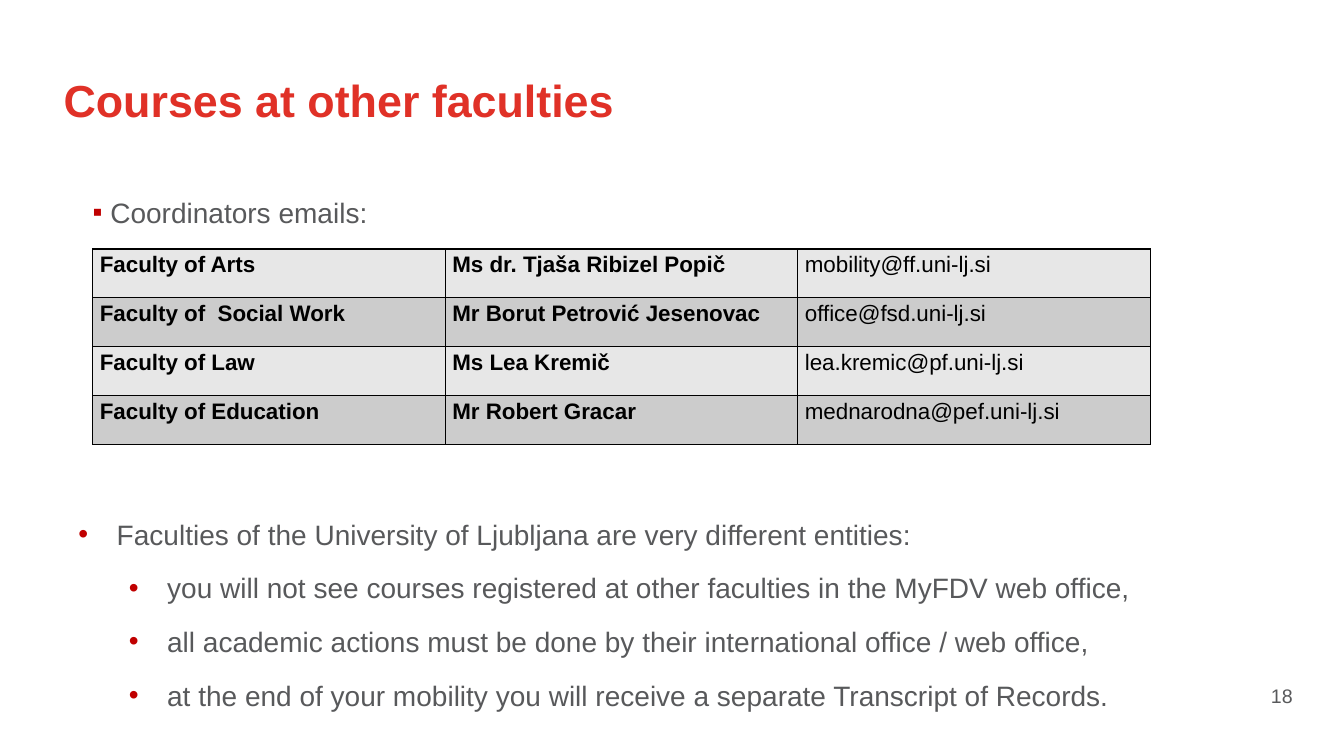
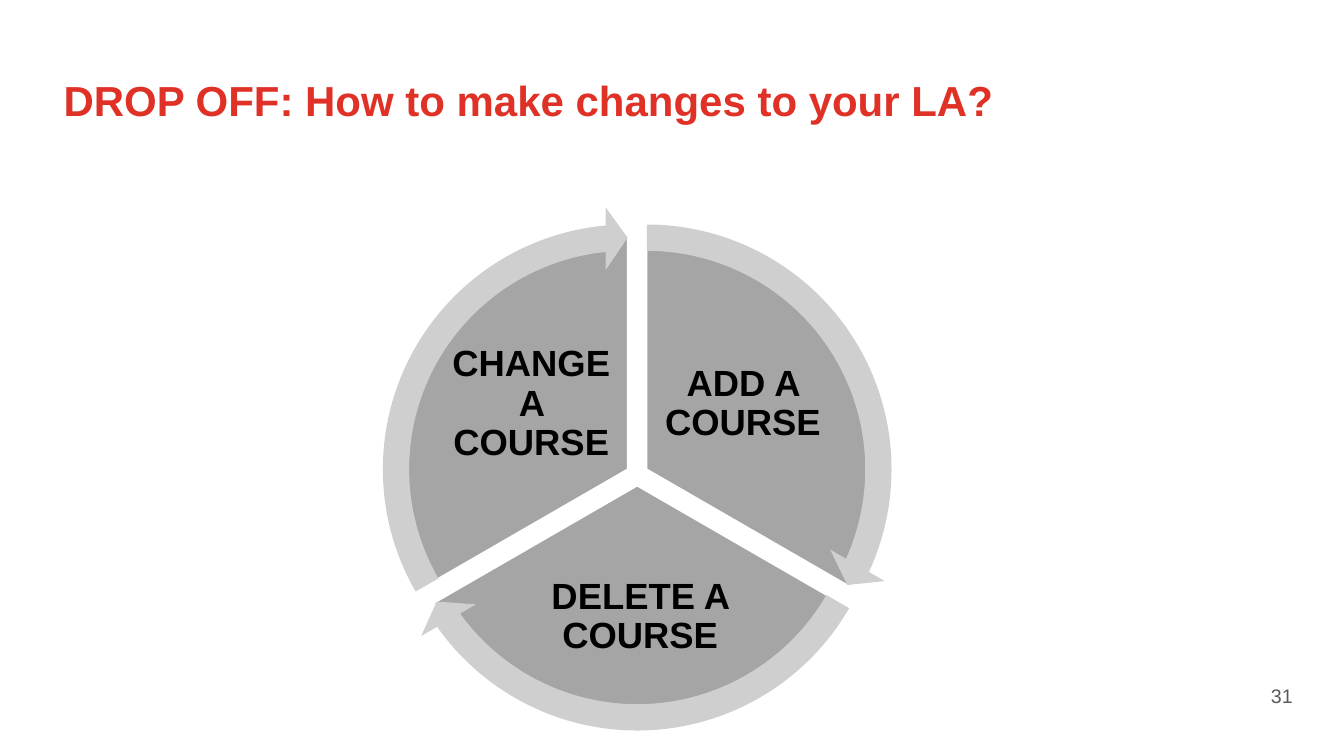
from math import cos, radians, sin

from lxml import etree
from pptx import Presentation
from pptx.dml.color import RGBColor
from pptx.enum.shapes import MSO_SHAPE
from pptx.enum.text import MSO_ANCHOR, PP_ALIGN
from pptx.oxml.ns import qn
from pptx.util import Inches, Pt

RED = RGBColor(0xE0, 0x31, 0x27)
DARK_RED = RGBColor(0xC0, 0x00, 0x00)
GREY = RGBColor(0x58, 0x59, 0x5B)
BLACK = RGBColor(0, 0, 0)
WHITE = RGBColor(0xFF, 0xFF, 0xFF)
BANDS = (RGBColor(0xE7, 0xE7, 0xE7), RGBColor(0xCC, 0xCC, 0xCC))
WEDGE = RGBColor(0xA5, 0xA5, 0xA5)
ARROW = RGBColor(0xCF, 0xCF, 0xCF)
FONT = "Arial"
LEFT, CENTER, RIGHT = PP_ALIGN.LEFT, PP_ALIGN.CENTER, PP_ALIGN.RIGHT
TOP, MIDDLE = MSO_ANCHOR.TOP, MSO_ANCHOR.MIDDLE
PIE, CURVE = MSO_SHAPE.PIE, MSO_SHAPE.CIRCULAR_ARROW
TITLE_ONLY = 5

STAFF = (
    ("Faculty of Arts", "Ms dr. Tjaša Ribizel Popič", "mobility@ff.uni-lj.si"),
    ("Faculty of  Social Work", "Mr Borut Petrović Jesenovac", "office@fsd.uni-lj.si"),
    ("Faculty of Law", "Ms Lea Kremič", "lea.kremic@pf.uni-lj.si"),
    ("Faculty of Education", "Mr Robert Gracar", "mednarodna@pef.uni-lj.si"),
)
# indent in inches, text
POINTS = (
    (0.38, "Faculties of the University of Ljubljana are very different entities:"),
    (0.88, "you will not see courses registered at other faculties in the MyFDV web office,"),
    (0.88, "all academic actions must be done by their international office / web office,"),
    (0.88, "at the end of your mobility you will receive a separate Transcript of Records."),
)
# text, label centre from the hub, label size
STEPS = (
    ("ADD A COURSE", (1.05, -0.7), (1.66, 1.38)),
    ("DELETE A COURSE", (0.03, 1.41), (2.49, 1.22)),
    ("CHANGE A COURSE", (-1.05, -0.7), (1.66, 1.38)),
)


def inches(*box):
    return [Inches(n) for n in box]


def write(para, text, size=20, color=GREY, bold=False, align=LEFT, space=1.0,
          bullet=None, indent=0, hang=0):
    para.alignment = align
    para.line_spacing = space
    if bullet:
        props = para._p.get_or_add_pPr()
        props.set("marL", str(Inches(indent)))
        props.set("indent", str(-Inches(hang)))
        tint = etree.SubElement(props, qn("a:buClr"))
        etree.SubElement(tint, qn("a:srgbClr"), val=str(DARK_RED))
        etree.SubElement(props, qn("a:buFont"), typeface=FONT)
        etree.SubElement(props, qn("a:buChar"), char=bullet)
    run = para.add_run()
    run.text = text
    font = run.font
    font.name, font.size, font.bold = FONT, Pt(size), bold
    font.color.rgb = color


def add_box(slide, box, anchor=TOP, inset=None):
    frame = slide.shapes.add_textbox(*inches(*box)).text_frame
    frame.word_wrap = True
    frame.vertical_anchor = anchor
    if inset is not None:
        frame.margin_left = frame.margin_right = Inches(inset)
        frame.margin_top = frame.margin_bottom = Inches(inset)
    return frame


def add_slide(deck, title, number, width, size):
    slide = deck.slides.add_slide(deck.slide_layouts[TITLE_ONLY])
    head = slide.shapes.title
    head.left, head.top, head.width, head.height = inches(0.53, 0.67, width, 0.71)
    head.text_frame.vertical_anchor = MIDDLE
    write(head.text_frame.paragraphs[0], title, size=size, color=RED, bold=True, space=0.9)
    foot = add_box(slide, (12.08, 6.7, 0.84, 0.4), MIDDLE)
    write(foot.paragraphs[0], str(number), size=14, align=RIGHT)
    return slide


def add_edges(cell):
    props = cell._tc.get_or_add_tcPr()
    for side in ("lnL", "lnR", "lnT", "lnB"):
        edge = etree.SubElement(props, qn("a:" + side), w=str(Pt(1)))
        fill = etree.SubElement(edge, qn("a:solidFill"))
        etree.SubElement(fill, qn("a:srgbClr"), val=str(BLACK))


def add_staff(slide, box):
    """Table of faculties, coordinators and addresses."""
    shape = slide.shapes.add_table(len(STAFF), len(STAFF[0]), *inches(*box))
    for row, line in enumerate(STAFF):
        for col, text in enumerate(line):
            cell = shape.table.cell(row, col)
            add_edges(cell)
            cell.fill.solid()
            cell.fill.fore_color.rgb = BANDS[row % 2]
            cell.margin_left = cell.margin_right = Inches(0.07)
            cell.margin_top = cell.margin_bottom = 0
            write(cell.text_frame.paragraphs[0], text, size=16, color=BLACK,
                  bold=col < 2, space=1.15)


def add_points(slide, box):
    frame = add_box(slide, box)
    for i, (indent, text) in enumerate(POINTS):
        para = frame.add_paragraph() if i else frame.paragraphs[0]
        write(para, text, space=1.6, bullet="•", indent=indent, hang=0.38)


def add_round(slide, kind, mid, size, color, adjust):
    """Square preset shape centred on mid."""
    x, y = mid
    shape = slide.shapes.add_shape(kind, *inches(x - size / 2, y - size / 2, size, size))
    shape.shadow.inherit = False
    shape.fill.solid()
    shape.fill.fore_color.rgb = color
    for i, value in enumerate(adjust):
        shape.adjustments[i] = value
    return shape


def add_cycle(slide, box):
    """Three wedges pushed out from the hub, with arrows round them."""
    left, top, size = box
    hub = left + size / 2, top + size / 2
    unit = 0.6  # adjustment units in one degree
    turn, push, tip = 120, 0.11, 3.28
    arcs = []
    for i, (text, shift, area) in enumerate(STEPS):
        start, end = (270 + turn * i) % 360, 30 + turn * i
        way = radians(end - turn / 2)
        mid = hub[0] + push * cos(way), hub[1] + push * sin(way)
        arcs.append((mid, start * unit, end * unit))
        pie = add_round(slide, PIE, mid, size * 0.89, WEDGE, (start * unit, end * unit))
        pie.line.color.rgb = WHITE
        pie.line.width = Pt(1)
        (wide, high), (dx, dy) = area, shift
        place = hub[0] + dx - wide / 2, hub[1] + dy - high / 2, wide, high
        label = add_box(slide, place, MIDDLE, 0.04)
        write(label.paragraphs[0], text, size=26, color=BLACK, bold=True,
              align=CENTER, space=0.9)
    for mid, start, end in arcs:
        arrow = add_round(slide, CURVE, mid, size, ARROW,
                          (0.05, tip, end - tip, start, 0.06))
        arrow.line.fill.background()


def main():
    deck = Presentation()
    deck.slide_width, deck.slide_height = inches(13.33, 7.5)

    slide = add_slide(deck, "Courses at other faculties", 18, 10.95, 32)
    add_staff(slide, (0.92, 2.47, 10.49, 1.94))
    add_points(slide, (0.68, 4.88, 11.4, 2.18))
    intro = add_box(slide, (0.82, 1.69, 10.95, 0.57))
    write(intro.paragraphs[0], " Coordinators emails:", space=1.6, bullet="▪")

    slide = add_slide(deck, "DROP OFF: How to make changes to your LA?", 31, 11.55, 30)
    add_cycle(slide, (3.71, 2.1, 5.22))
    deck.save("out.pptx")


if __name__ == "__main__":
    main()
